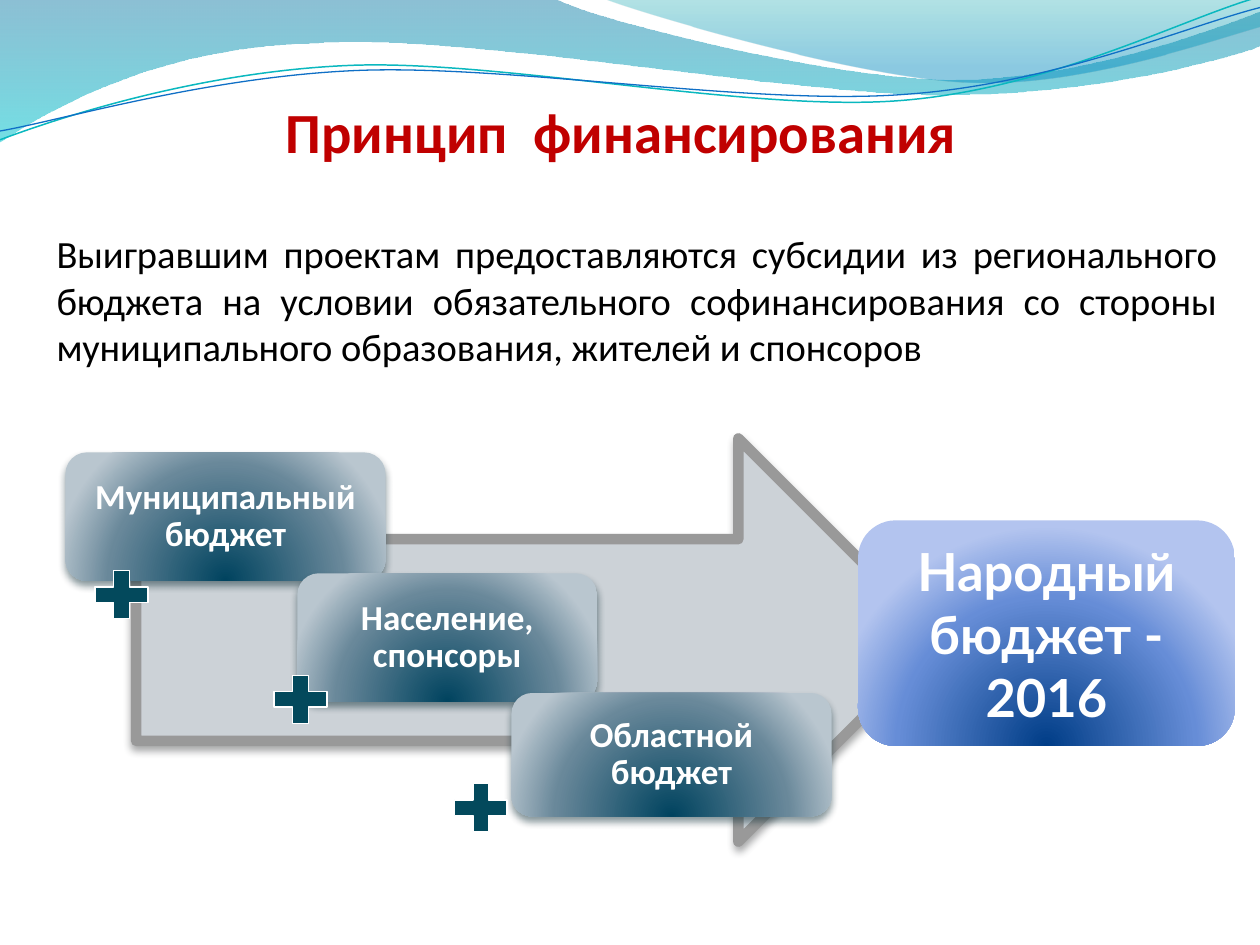
from lxml import etree
from pptx import Presentation
from pptx.dml.color import RGBColor
from pptx.enum.shapes import MSO_SHAPE
from pptx.enum.text import MSO_ANCHOR, PP_ALIGN
from pptx.oxml.ns import qn
from pptx.util import Inches, Pt

COLORS = {
    "title": "C00000", "body": "000000", "white": "FFFFFF",
    "arrow": "CCD2D7", "arrow_line": "999999", "plus": "03495C",
    "teal_line": "0AB8BF", "blue_line": "0F6FC6",
    "arrow_shadow": "484A4C", "step_shadow": "00232C",
}
STEP_STOPS = [(0, "00435F", 100), (68, "69889A", 100), (100, "B9C6CF", 100)]
RESULT_STOPS = [(0, "003D87", 100), (68, "668DD7", 100), (100, "B3C4EF", 100)]

# Each wave is a start point followed by line (2 numbers) or curve (6 numbers) segments.
BAND_LEFT = [(0, 0), (4.4, -0.01), (4.76, 0.17, 6.64, 0.63, 7.58, 0.63),
             (8.53, 0.63, 9.58, 0.26, 10, 0.09), (10.01, 0.36),
             (9.83, 0.44, 8.7, 0.76, 7.46, 0.75),
             (6.22, 0.75, 3.82, 0.28, 2.57, 0.34),
             (1.29, 0.36, 0.46, 0.83, -0.01, 1.13)]
BAND_RIGHT = [(4.79, -0.01), (5.09, 0.11, 6.82, 0.62, 7.69, 0.65),
              (8.56, 0.69, 9.61, 0.32, 10, 0.21), (10, 0)]
LINE_TEAL = [(0, 1.11), (0.48, 0.93, 1.58, 0.57, 2.77, 0.52),
             (3.95, 0.47, 5.93, 0.89, 7.13, 0.8),
             (8.33, 0.71, 9.38, 0.15, 9.98, -0.02)]
LINE_BLUE = [(0, 1.04), (0.47, 0.96, 1.64, 0.61, 2.83, 0.56),
             (4.03, 0.51, 5.97, 0.84, 7.17, 0.75),
             (8.36, 0.67, 9.41, 0.21, 10, 0.06)]


def rgb(name):
    return RGBColor.from_string(COLORS[name])


def add_color(parent, color, opacity):
    node = etree.SubElement(parent, qn("a:srgbClr"), val=color)
    if opacity < 100:
        etree.SubElement(node, qn("a:alpha"), val=str(opacity * 1000))


def fill_gradient(shape, stops, radial=False):
    """Fill with (position, colour, opacity) stops, downward or from below the centre."""
    shape.fill.background()
    old = shape._element.spPr.find(qn("a:noFill"))
    grad = etree.Element(qn("a:gradFill"), rotWithShape="1")
    stop_list = etree.SubElement(grad, qn("a:gsLst"))
    for position, color, opacity in stops:
        stop = etree.SubElement(stop_list, qn("a:gs"), pos=str(position * 1000))
        add_color(stop, color, opacity)
    if radial:
        circle = etree.SubElement(grad, qn("a:path"), path="circle")
        etree.SubElement(circle, qn("a:fillToRect"),
                         l="50000", t="130000", r="50000", b="-30000")
    else:
        etree.SubElement(grad, qn("a:lin"), ang="5400000", scaled="0")
    old.getparent().replace(old, grad)


def add_shadow(shape, color):
    effects = shape._element.spPr.find(qn("a:effectLst"))
    shadow = etree.SubElement(effects, qn("a:outerShdw"), blurRad=str(Pt(4.5)),
                              dist=str(Pt(3)), dir="5400000", rotWithShape="0")
    add_color(shadow, COLORS[color], 48)


def write_text(shape, text, size, color, font="Calibri", bold=False,
               align=PP_ALIGN.CENTER, anchor=MSO_ANCHOR.MIDDLE,
               insets=(0.1, 0.05, 0.1, 0.05), line_spacing=None, space_before=0):
    frame = shape.text_frame
    frame.word_wrap = True
    frame.vertical_anchor = anchor
    (frame.margin_left, frame.margin_top,
     frame.margin_right, frame.margin_bottom) = map(Inches, insets)
    para = frame.paragraphs[0]
    para.alignment = align
    para.line_spacing = line_spacing
    para.space_before = Pt(space_before)
    span = para.add_run()
    span.text = text
    span.font.name, span.font.size, span.font.bold = font, Pt(size), bold
    span.font.color.rgb = rgb(color)


def add_box(page, kind, left, top, width, height, fill=None, line=None, weight=0.75):
    box = page.shapes.add_shape(kind, *map(Inches, (left, top, width, height)))
    box.shadow.inherit = False
    if fill:
        box.fill.solid()
        box.fill.fore_color.rgb = rgb(fill)
    if line:
        box.line.color.rgb = rgb(line)
        box.line.width = Pt(weight)
    else:
        box.line.fill.background()
    return box


def bend_segments(shape, wave):
    """Turn the straight segments of a freeform into the wave's Bezier curves."""
    straight = list(shape._element.iter(qn("a:lnTo")))
    for node, segment in zip(straight, wave[1:]):
        if len(segment) == 2:
            continue
        curve = etree.Element(qn("a:cubicBezTo"))
        for x, y in zip(segment[::2], segment[1::2]):
            etree.SubElement(curve, qn("a:pt"), x=str(Inches(x) - shape.left),
                             y=str(Inches(y) - shape.top))
        node.getparent().replace(node, curve)


def add_wave(page, wave, stops=None, line=None, weight=0.75):
    corners = [(Inches(segment[-2]), Inches(segment[-1])) for segment in wave]
    builder = page.shapes.build_freeform(*corners[0])
    builder.add_line_segments(corners[1:], close=bool(stops))
    shape = builder.convert_to_shape()
    bend_segments(shape, wave)
    shape.shadow.inherit = False
    if stops:
        fill_gradient(shape, stops)
        shape.line.fill.background()
    else:
        shape.fill.background()
        shape.line.color.rgb = rgb(line)
        shape.line.width = Pt(weight)


def draw_waves(page):
    add_wave(page, BAND_LEFT, stops=[(0, "0074A1", 45), (100, "00C6CF", 55)])
    add_wave(page, BAND_RIGHT, stops=[(0, "00A1A9", 30), (80, "008BBF", 45)])
    add_wave(page, LINE_TEAL, line="teal_line", weight=0.85)
    add_wave(page, LINE_BLUE, line="blue_line")


def place_title(page, left, top, width, height):
    title = page.shapes.title
    page.shapes._spTree.append(title._element)  # in front of the waves
    title.left, title.top, title.width, title.height = map(
        Inches, (left, top, width, height))
    write_text(title, "Принцип  финансирования", size=32.4, color="title", bold=True,
               anchor=MSO_ANCHOR.BOTTOM, insets=(0, 0.05, 0, 0))


def place_body(page, left, top, width, height):
    body = page.shapes.add_textbox(*map(Inches, (left, top, width, height)))
    write_text(body, "Выигравшим проектам предоставляются субсидии из регионального "
               "бюджета на условии обязательного софинансирования со стороны "
               "муниципального образования, жителей и спонсоров",
               size=22, color="body", align=PP_ALIGN.JUSTIFY,
               anchor=MSO_ANCHOR.TOP, space_before=4.8)


def draw_funding(page, left, top):
    """Draw the arrow, its three sources and the plus signs from a top-left corner."""
    arrow = add_box(page, MSO_SHAPE.RIGHT_ARROW, left + 0.56, top, 6.38, 3.2,
                    fill="arrow", line="arrow_line", weight=6)
    etree.SubElement(arrow.line._get_or_add_ln(), qn("a:round"))
    add_shadow(arrow, "arrow_shadow")
    sources = [("Муниципальный бюджет", 0, 0.11, 2.54, 1.02),
               ("Население, спонсоры", 1.84, 1.07, 2.38, 1.02),
               ("Областной бюджет", 3.54, 2.02, 2.54, 0.98)]
    for text, x, y, width, height in sources:
        box = add_box(page, MSO_SHAPE.ROUNDED_RECTANGLE, left + x, top + y, width, height)
        fill_gradient(box, STEP_STOPS, radial=True)
        add_shadow(box, "step_shadow")
        write_text(box, text, size=20, color="white", bold=True,
                   insets=(0.08,) * 4, line_spacing=0.9)
    for x, y in [(0.16, 0.98), (1.58, 1.81), (3.01, 2.67)]:
        add_box(page, MSO_SHAPE.MATH_PLUS, left + x, top + y, 0.57, 0.52,
                fill="plus", line="white")


def draw_result(page, left, top, width, height):
    box = add_box(page, MSO_SHAPE.FLOWCHART_ALTERNATE_PROCESS, left, top, width, height)
    fill_gradient(box, RESULT_STOPS, radial=True)
    write_text(box, "Народный бюджет - 2016", size=30, color="white", font="Lato", bold=True)


def main():
    deck = Presentation()
    deck.slide_width, deck.slide_height = Inches(10), Inches(7.5)
    page = deck.slides.add_slide(deck.slide_layouts[5])
    draw_waves(page)
    place_title(page, 1.22, 0.68, 7.42, 0.63)
    place_body(page, 0.35, 1.78, 9.41, 1.5)
    draw_funding(page, 0.52, 3.48)
    draw_result(page, 6.81, 4.13, 2.99, 1.79)
    deck.save("out.pptx")


if __name__ == "__main__":
    main()
